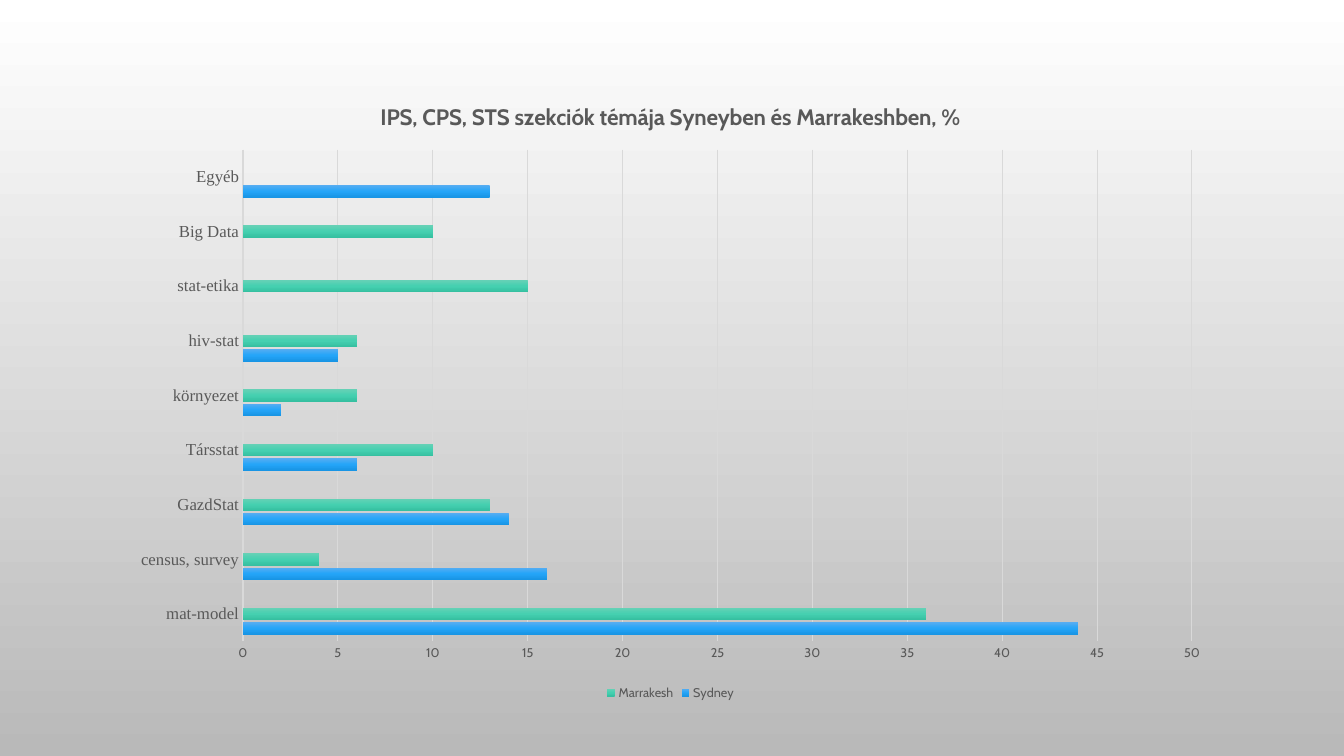
from copy import deepcopy

from pptx import Presentation
from pptx.chart.data import CategoryChartData
from pptx.dml.color import RGBColor
from pptx.enum.chart import XL_CHART_TYPE as ChartType
from pptx.enum.chart import XL_LEGEND_POSITION as LegendPosition
from pptx.enum.chart import XL_TICK_MARK as TickMark
from pptx.oxml import parse_xml
from pptx.oxml.ns import nsdecls, qn
from pptx.util import Inches, Pt

WHITE = RGBColor(0xFF, 0xFF, 0xFF)
SILVER = RGBColor(0xB9, 0xB9, 0xB9)
GRID_GREY = RGBColor(0xD9, 0xD9, 0xD9)
TEXT_GREY = RGBColor(0x59, 0x59, 0x59)
BLUES = [RGBColor(0x56, 0xAD, 0xF2), RGBColor(0x25, 0xA5, 0xF8), RGBColor(0x18, 0x95, 0xE5)]
TEALS = [RGBColor(0x66, 0xD1, 0xB6), RGBColor(0x45, 0xD0, 0xB0), RGBColor(0x36, 0xC0, 0xA1)]
GREENS = [RGBColor(0x94, 0xC8, 0x6E), RGBColor(0x85, 0xC6, 0x52), RGBColor(0x76, 0xB6, 0x43)]


def fill_downwards(fill, element, colours):
    """Fill with evenly spaced colours from top to bottom."""
    fill.gradient()
    fill.gradient_angle = 270
    stop_list = next(element.iter(qn("a:gsLst")))
    for _ in colours[2:]:
        stop_list.append(deepcopy(stop_list[0]))
    for index, (stop, colour) in enumerate(zip(fill.gradient_stops, colours)):
        stop.position = index / (len(colours) - 1)
        stop.color.rgb = colour


def style_font(font, size, name="Cabin", bold=False):
    font.size = Pt(size)
    font.name = name
    font.bold = bold
    font.color.rgb = TEXT_GREY


# Slide and background
deck = Presentation()
deck.slide_width, deck.slide_height = Inches(13.33), Inches(7.5)
slide = deck.slides.add_slide(deck.slide_layouts[6])
fill_downwards(slide.background.fill, slide.element, [WHITE, SILVER])

# Chart data; the empty third series keeps its slot in each group
topics = ["mat-model", "census, survey", "GazdStat", "Társstat", "környezet",
          "hiv-stat", "stat-etika", "Big Data", "Egyéb"]
series_rows = [
    ("Sydney", [44, 16, 14, 6, 2, 5, None, None, 13], BLUES),
    ("Marrakesh", [36, 4, 13, 10, 6, 6, 15, 10, None], TEALS),
    ("Oszlop1", [None] * len(topics), GREENS),
]
data = CategoryChartData()
data.categories = topics
for name, values, _ in series_rows:
    data.add_series(name, values)
chart = slide.shapes.add_chart(
    ChartType.BAR_CLUSTERED, Inches(1.18), Inches(0.79), Inches(10.94), Inches(6.2), data
).chart
chart.font.name = "Cabin"
chart.font.size = Pt(10)

# Title
chart.has_title = True
title = chart.chart_title
title.include_in_layout = False
title.text_frame.text = "IPS, CPS, STS szekciók témája Syneyben és Marrakeshben, %"
style_font(title.text_frame.paragraphs[0].runs[0].font, 16, bold=True)

# Bars
plot = chart.plots[0]
plot.gap_width = 115
plot.overlap = -20
plot.vary_by_categories = False
for series, (_, _, colours) in zip(plot.series, series_rows):
    series.invert_if_negative = False
    fill_downwards(series.format.fill, series._element, colours)

# Axes
topic_axis, percent_axis = chart.category_axis, chart.value_axis
for axis in (topic_axis, percent_axis):
    axis.major_tick_mark = axis.minor_tick_mark = TickMark.NONE
style_font(topic_axis.tick_labels.font, 12, "Times New Roman")
topic_axis.format.line.color.rgb = GRID_GREY
topic_axis.format.line.width = Pt(1)
style_font(percent_axis.tick_labels.font, 9)
percent_axis.tick_labels.number_format = "General"
percent_axis.tick_labels.number_format_is_linked = False
percent_axis.minimum_scale, percent_axis.maximum_scale = 0, 50
percent_axis.major_unit = 5
percent_axis.format.line.fill.background()
percent_axis.major_gridlines.format.line.color.rgb = GRID_GREY
percent_axis.major_gridlines.format.line.width = Pt(0.75)

# Legend without the empty series
chart.has_legend = True
legend = chart.legend
legend.position = LegendPosition.BOTTOM
legend.include_in_layout = False
style_font(legend.font, 9)
legend._element.find(qn("c:legendPos")).addnext(parse_xml(
    f'<c:legendEntry {nsdecls("c")}><c:idx val="0"/><c:delete val="1"/></c:legendEntry>'))

deck.save("out.pptx")
